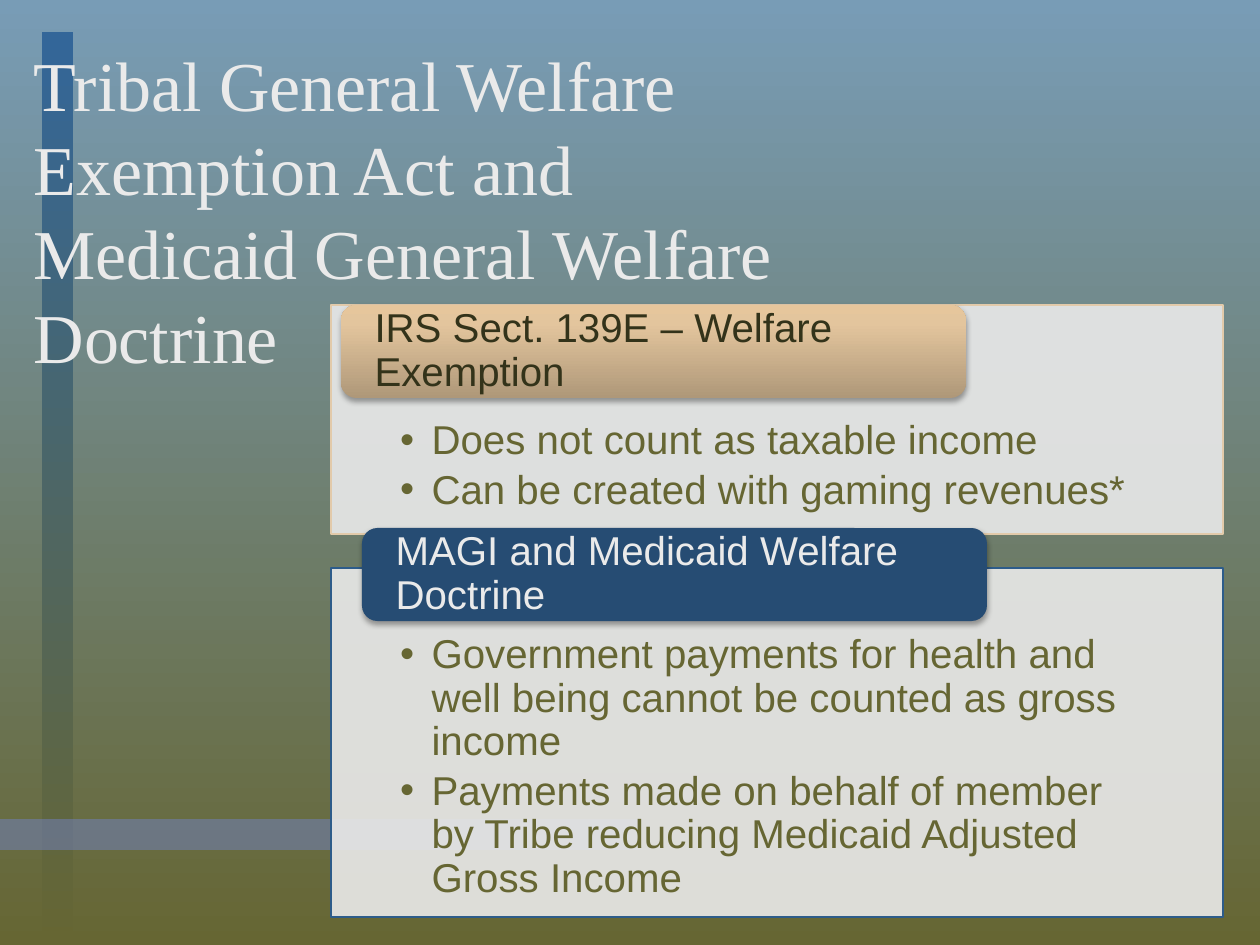
from copy import deepcopy

from lxml.etree import SubElement
from pptx import Presentation
from pptx.dml.color import RGBColor
from pptx.enum.shapes import MSO_SHAPE
from pptx.enum.text import MSO_ANCHOR, MSO_AUTO_SIZE, PP_ALIGN
from pptx.oxml.ns import qn
from pptx.util import Pt

PX = 914400 / 126  # EMU in one px
color = RGBColor.from_string


def paint(fill, colors, angle=270, alpha=None):
    """Solid fill for one colour, gradient for a list of (position, colour)."""
    if isinstance(colors, str):
        fill.solid()
        fill.fore_color.rgb = color(colors)
        if alpha:
            node = fill._xPr.find(qn("a:solidFill"))[0]
            SubElement(node, qn("a:alpha"), val=str(alpha * 1000))
        return
    fill.gradient()
    fill.gradient_angle = angle
    stop_list = fill._xPr.find(qn("a:gradFill")).find(qn("a:gsLst"))
    while len(stop_list) < len(colors):
        stop_list.append(deepcopy(stop_list[0]))
    for stop, (position, value) in zip(fill.gradient_stops, colors):
        stop.position = position
        stop.color.rgb = color(value)


def put(box, place, frame_format):
    """Place a box in px and format its text frame."""
    box.left, box.top, box.width, box.height = (round(n * PX) for n in place)
    for name, value in frame_format.items():
        setattr(box.text_frame, name, value)


deck = Presentation()
deck.slide_width, deck.slide_height = round(1260 * PX), round(945 * PX)
page = deck.slides.add_slide(deck.slide_layouts[3])  # two content
title, *lists = page.placeholders
paint(page.background.fill, [(0, "789CB6"), (1, "666633")])

# Decorative bars, behind everything else
bars = [
    ((42, 32, 31, 913), [(0, "336699"), (1, "666633")], None),
    ((0, 819, 640, 31), "7181C3", 50),
]
for order, (place, colors, alpha) in enumerate(bars):
    bar = page.shapes.add_shape(MSO_SHAPE.RECTANGLE, 0, 0, 0, 0)
    put(bar, place, {})
    paint(bar.fill, colors, alpha=alpha)
    bar.line.fill.background()
    bar.shadow.inherit = False
    page.shapes._spTree.insert(2 + order, bar._element)

# Title
put(title, (21, 34, 840, 351), {
    "text": "Tribal General Welfare Exemption Act and Medicaid General Welfare Doctrine",
    "word_wrap": True, "auto_size": MSO_AUTO_SIZE.NONE, "vertical_anchor": MSO_ANCHOR.MIDDLE})
para = title.text_frame.paragraphs[0]
para.alignment = PP_ALIGN.LEFT
para.line_spacing = Pt(48)
span = para.runs[0]
span.font.name, span.font.size = "Times New Roman", Pt(40)
span.font.color.rgb = color("EAEAEA")

# Two panels, each a list under a rounded heading
sections = [
    {"panel": (331, 305, 892, 229), "line": "E2CAAA", "inset": 115,
     "pill": (341, 305, 625, 93), "ink": "33331A",
     "fill": [(0, "AF9879"), (0.8, "E3C59D"), (1, "E6C69C")],
     "heading": "IRS Sect. 139E – Welfare Exemption",
     "items": ["Does not count as taxable income",
               "Can be created with gaming revenues*"]},
    {"panel": (331, 568, 892, 349), "line": "2D5C8A", "inset": 66,
     "pill": (362, 528, 625, 93), "ink": "EAEAEA", "fill": "264C73",
     "heading": "MAGI and Medicaid Welfare Doctrine",
     "items": ["Government payments for health and well being cannot be counted as gross income",
               "Payments made on behalf of member by Tribe reducing Medicaid Adjusted Gross Income"]},
]
for box, section in zip(lists, sections):
    put(box, section["panel"], {
        "text": "\n".join(section["items"]), "word_wrap": True,
        "auto_size": MSO_AUTO_SIZE.NONE, "vertical_anchor": MSO_ANCHOR.TOP,
        "margin_left": round(69 * PX), "margin_right": round(69 * PX),
        "margin_top": round(section["inset"] * PX), "margin_bottom": round(23 * PX)})
    paint(box.fill, "EAEAEA", alpha=90)
    box.line.color.rgb = color(section["line"])
    box.line.width = Pt(0.75)
    for para in box.text_frame.paragraphs:
        para.level = 1
        properties = para._p.get_or_add_pPr()
        indent = round(31.5 * PX)
        properties.set("marL", str(indent))
        properties.set("indent", str(-indent))
        SubElement(properties, qn("a:buFont"), typeface="Arial")
        SubElement(properties, qn("a:buChar"), char="•")

    pill = page.shapes.add_shape(MSO_SHAPE.ROUNDED_RECTANGLE, 0, 0, 0, 0)
    put(pill, section["pill"], {
        "text": section["heading"], "word_wrap": True, "vertical_anchor": MSO_ANCHOR.MIDDLE,
        "margin_left": round(29 * PX), "margin_right": round(29 * PX),
        "margin_top": 0, "margin_bottom": 0})
    paint(pill.fill, section["fill"], angle=90)
    pill.line.fill.background()
    pill.shadow.inherit = False
    effects = pill._element.spPr.find(qn("a:effectLst"))
    shadow = SubElement(effects, qn("a:outerShdw"), blurRad=str(Pt(3.1)), dist=str(Pt(1.8)),
                        dir="5400000", rotWithShape="0")
    black = SubElement(shadow, qn("a:srgbClr"), val="000000")
    SubElement(black, qn("a:alpha"), val="35000")

    # Shared text format
    for shape, ink, gap in ((box, "666633", 3.5), (pill, section["ink"], 0)):
        for para in shape.text_frame.paragraphs:
            formats = {"alignment": PP_ALIGN.LEFT, "line_spacing": 0.9,
                       "space_before": Pt(0), "space_after": Pt(gap)}
            for name, value in formats.items():
                setattr(para, name, value)
            span = para.runs[0]
            span.font.name, span.font.size = "Arial", Pt(23)
            span.font.color.rgb = color(ink)

deck.save("out.pptx")
